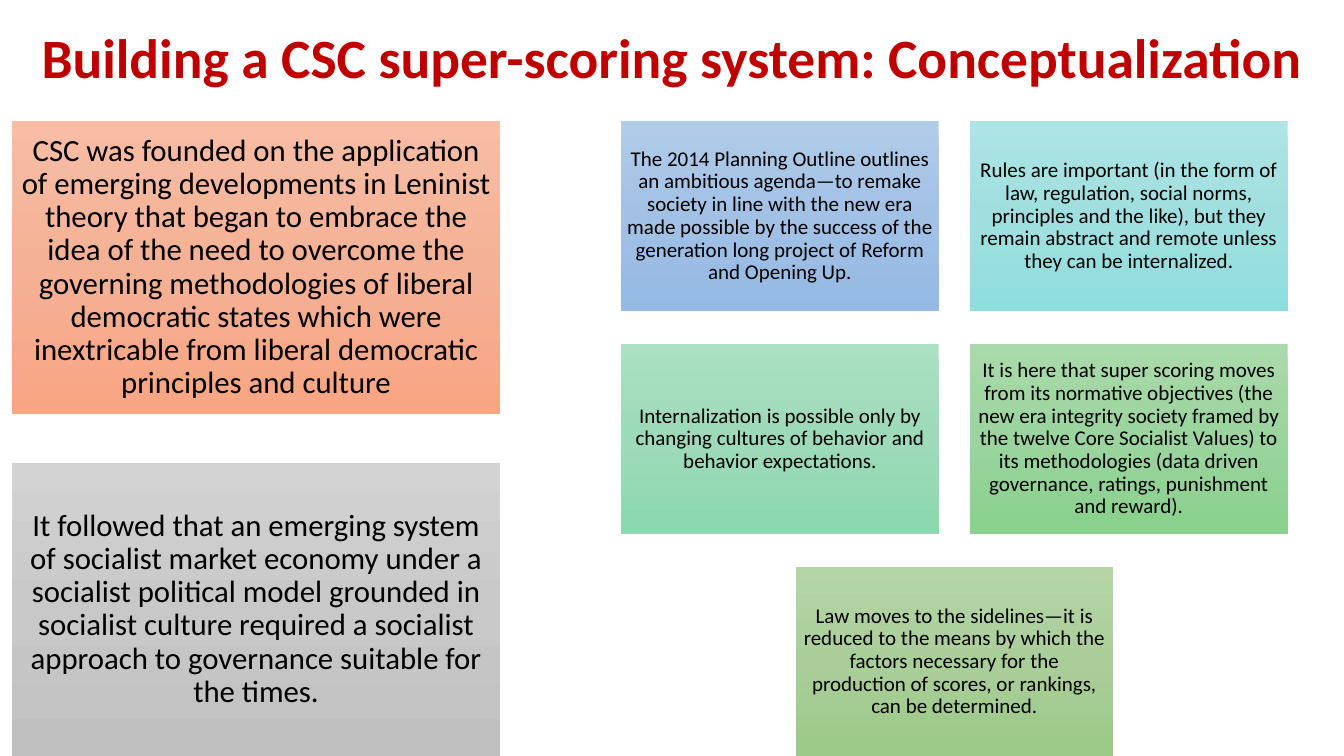
import copy

import pptx
import pptx.dml.color
import pptx.enum.shapes
import pptx.enum.text
import pptx.util

PX = 9144  # EMU; 100 px to the inch
FONT = "Calibri"
COLORS = {
    "title": "C00000",
    "text": "000000",
    "orange": ("F7BDA5", "F5B196", "F8A582"),
    "gray": ("D2D2D2", "C8C8C8", "C0C0C0"),
    "blue": ("B1CBE9", "A3C1E5", "93B9E4"),
    "cyan": ("AEE4E5", "A0DFDF", "8FDEDE"),
    "mint": ("ABE0C3", "9DDAB9", "8CD8AF"),
    "green": ("A9DAAB", "9BD49E", "89D18C"),
    "olive": ("B5D5A7", "AACE9A", "9CC987"),
}


def write_centred(box, text, size, color, inset):
    frame = box.text_frame
    frame.word_wrap = True
    frame.vertical_anchor = pptx.enum.text.MSO_ANCHOR.MIDDLE
    frame.margin_left = frame.margin_right = inset * PX
    frame.margin_top = frame.margin_bottom = inset * PX
    para = frame.paragraphs[0]
    para.text = text
    para.alignment = pptx.enum.text.PP_ALIGN.CENTER
    para.line_spacing = 0.9
    para.font.name = FONT
    para.font.size = pptx.util.Pt(size)
    para.font.color.rgb = pptx.dml.color.RGBColor.from_string(COLORS[color])
    return para


def add_card(page, left, top, width, height, color, text, size, inset):
    """Add a borderless rectangle with a three-stop vertical gradient."""
    card = page.shapes.add_shape(
        pptx.enum.shapes.MSO_SHAPE.RECTANGLE,
        left * PX, top * PX, width * PX, height * PX)
    card.shadow.inherit = False
    card.line.fill.background()
    card.fill.gradient()
    card.fill.gradient_angle = 270
    stop_list = card._element.spPr.find(".//" + pptx.oxml.ns.qn("a:gsLst"))
    stop_list.insert(1, copy.deepcopy(stop_list[0]))
    for i, (stop, shade) in enumerate(zip(card.fill.gradient_stops, COLORS[color])):
        stop.position = i / 2
        stop.color.rgb = pptx.dml.color.RGBColor.from_string(shade)
    write_centred(card, text, size, "text", inset)


deck = pptx.Presentation()
deck.slide_width = 1333 * PX
deck.slide_height = 750 * PX
page = deck.slides.add_slide(deck.slide_layouts[6])

title = page.shapes.add_textbox(0, 0, 1333 * PX, 120 * PX)
heading = write_centred(
    title, "Building a CSC super-scoring system: Conceptualization", 39.6, "title", 5)
heading.font.bold = True

CONTENT_TOP = 120

# Left column: the two founding premises
premises = [
    ("orange", "CSC was founded on the application of emerging developments in "
     "Leninist theory that began to embrace the idea of the need to overcome the "
     "governing methodologies of liberal democratic states which were inextricable "
     "from liberal democratic principles and culture"),
    ("gray", "It followed that an emerging system of socialist market economy under "
     "a socialist political model grounded in socialist culture required a socialist "
     "approach to governance suitable for the times."),
]
for row, (color, text) in enumerate(premises):
    add_card(page, 12, CONTENT_TOP + row * 339, 484, 291, color, text, 22, 9)

# Right grid: two columns, with the last card centred beneath them
GRID_LEFT, CARD_WIDTH, CARD_HEIGHT = 616, 315, 189
COLUMN_STEP, ROW_STEP = 346, 221
arguments = [
    (0, 0, "blue", "The 2014 Planning Outline outlines an ambitious agenda—to remake "
     "society in line with the new era made possible by the success of the generation "
     "long project of Reform and Opening Up."),
    (1, 0, "cyan", "Rules are important (in the form of law, regulation, social norms, "
     "principles and the like), but they remain abstract and remote unless they can be "
     "internalized."),
    (0, 1, "mint", "Internalization is possible only by changing cultures of behavior "
     "and behavior expectations."),
    (1, 1, "green", "It is here that super scoring moves from its normative objectives "
     "(the new era integrity society framed by the twelve Core Socialist Values) to its "
     "methodologies (data driven governance, ratings, punishment and reward)."),
    (0.5, 2, "olive", "Law moves to the sidelines—it is reduced to the means by which "
     "the factors necessary for the production of scores, or rankings, can be "
     "determined."),
]
for column, row, color, text in arguments:
    add_card(page, GRID_LEFT + int(column * COLUMN_STEP), CONTENT_TOP + row * ROW_STEP,
             CARD_WIDTH, CARD_HEIGHT, color, text, 15, 6)

deck.save("out.pptx")
